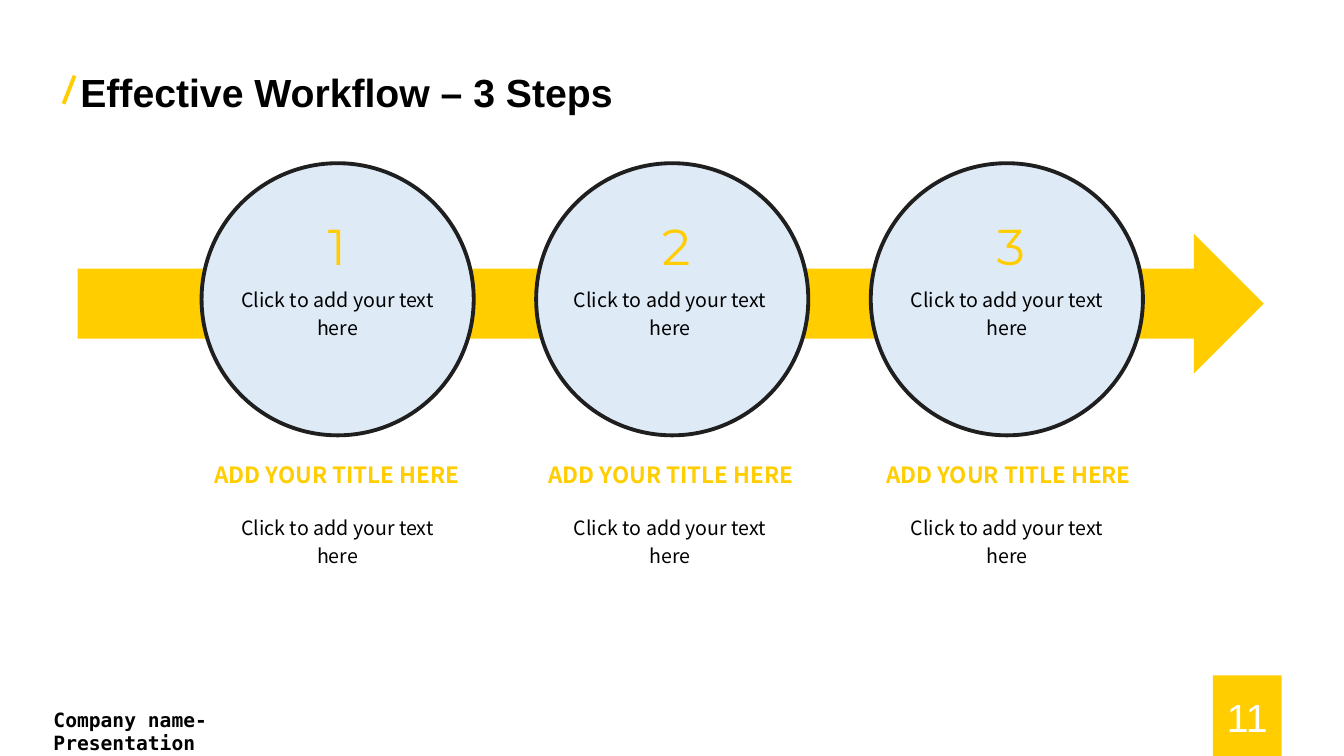
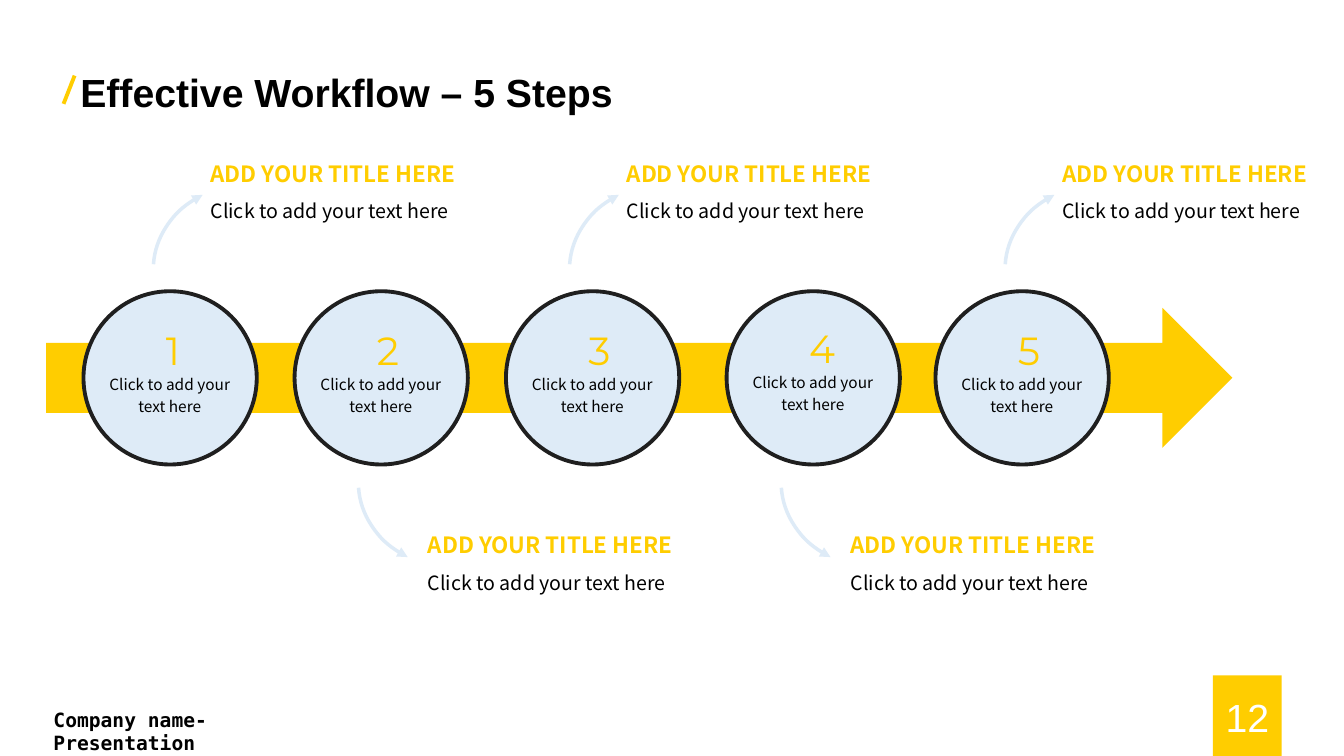
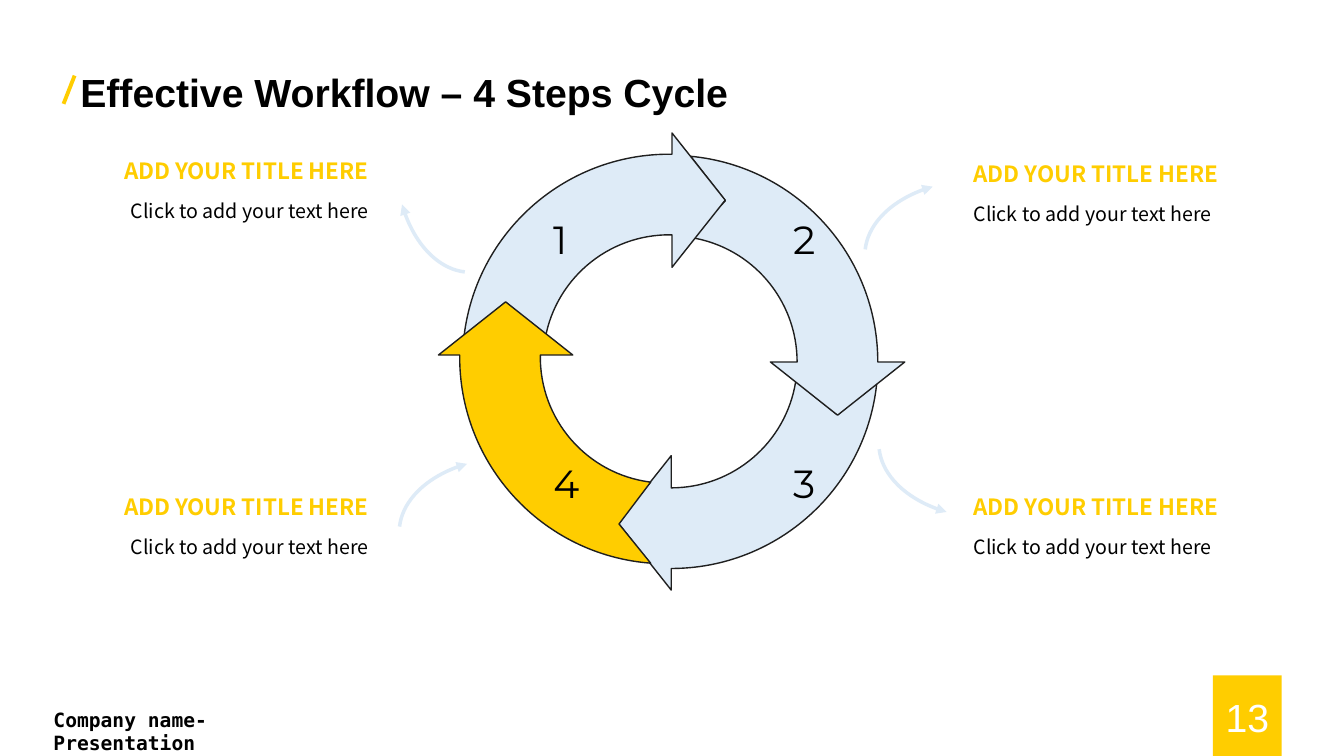
from math import asin, cos, degrees, radians, sin, tan

from lxml import etree
from pptx import Presentation
from pptx.dml.color import RGBColor
from pptx.enum.shapes import MSO_CONNECTOR, MSO_SHAPE
from pptx.enum.text import MSO_ANCHOR, MSO_AUTO_SIZE, PP_ALIGN
from pptx.oxml.ns import qn
from pptx.util import Pt

LEFT, CENTER, RIGHT = PP_ALIGN.LEFT, PP_ALIGN.CENTER, PP_ALIGN.RIGHT
TOP, MIDDLE = MSO_ANCHOR.TOP, MSO_ANCHOR.MIDDLE
NO_AUTOFIT = MSO_AUTO_SIZE.NONE
STRAIGHT = MSO_CONNECTOR.STRAIGHT
RECTANGLE, OVAL = MSO_SHAPE.RECTANGLE, MSO_SHAPE.OVAL
ARC, RIGHT_ARROW = MSO_SHAPE.ARC, MSO_SHAPE.RIGHT_ARROW

YELLOW, PALE_BLUE, INK = "FFCD00", "DEEBF7", "1F1F1F"
BLACK, WHITE = "000000", "FFFFFF"
TITLE_FONT, FOOTER_FONT = "Arial", "DejaVu Sans Mono"
NUMBER_FONT, BODY_FONT = "Montserrat", "Noto Sans CJK SC"

SLIDE_WIDTH, SLIDE_HEIGHT = 960, 540
TITLE_ONLY = 5
HEADING = "ADD YOUR TITLE HERE"
PROMPT = "Click to add your text here"

OUTER_RADIUS, INNER_RADIUS = 147.6, 90
HEAD_HALF, HEAD_LENGTH = 48, 38
OUTER_CURVE, INNER_CURVE = 0, 7


def color(hex_value):
    return RGBColor.from_string(hex_value)


def points(*lengths):
    return [Pt(length) for length in lengths]


def write(holder, text, size=14, font=BODY_FONT, fill=BLACK, bold=False,
          align=LEFT, anchor=TOP, spacing=None):
    frame = holder.text_frame
    frame.word_wrap = True
    frame.auto_size = NO_AUTOFIT
    frame.vertical_anchor = anchor
    frame.text = text
    paragraph = frame.paragraphs[0]
    paragraph.alignment = align
    if spacing:
        paragraph.line_spacing = spacing
    style = paragraph.runs[0].font
    style.name, style.size, style.bold = font, Pt(size), bold
    style.color.rgb = color(fill)


def add_text(slide, box, text, **style):
    write(slide.shapes.add_textbox(*points(*box)), text, **style)


def paint(shape, fill=None, line=None, width=1):
    shape.shadow.inherit = False
    if fill:
        shape.fill.solid()
        shape.fill.fore_color.rgb = color(fill)
    else:
        shape.fill.background()
    if line:
        shape.line.color.rgb = color(line)
        shape.line.width = Pt(width)
    else:
        shape.line.fill.background()


def add_figure(slide, kind, box, **look):
    figure = slide.shapes.add_shape(kind, *points(*box))
    paint(figure, **look)
    return figure


def add_number(slide, left, top, number, size=28, width=20, fill=YELLOW):
    add_text(slide, (left, top, width, size * 1.45), str(number), size=size,
             font=NUMBER_FONT, fill=fill, align=CENTER)


def add_heading(slide, left, top, width, align=LEFT):
    add_text(slide, (left, top, width, 26.6), HEADING, size=16,
             fill=YELLOW, bold=True, align=align)


def add_prompt(slide, box, size=14, align=CENTER):
    add_text(slide, box, PROMPT, size=size, align=align, spacing=1.2)


def add_callout(slide, left, top, width, gap, align=LEFT):
    add_heading(slide, left, top, width, align)
    add_prompt(slide, (left, top + gap, width, 27.4), align=align)


def add_pointer(slide, box, flipped=False, rotation=0):
    pointer = add_figure(slide, ARC, box, line=PALE_BLUE, width=2.5)
    pointer.adjustments[0], pointer.adjustments[1] = 109.73, 141.98
    pointer.rotation = rotation
    properties = pointer._element.spPr
    if flipped:
        properties.find(qn("a:xfrm")).set("flipV", "1")
    outline = properties.find(qn("a:ln"))
    etree.SubElement(outline, qn("a:tailEnd")).set("type", "triangle")


def add_base(deck, title, page, title_width=415.4):
    slide = deck.slides.add_slide(deck.slide_layouts[TITLE_ONLY])
    heading = slide.shapes.title
    heading.left, heading.top, heading.width, heading.height = points(
        50.2, 45.3, title_width, 41)
    write(heading, title, size=28, font=TITLE_FONT, bold=True, anchor=MIDDLE)

    slash = slide.shapes.add_connector(STRAIGHT, *points(53.3, 54, 45.4, 74.2))
    slash.line.color.rgb = color(YELLOW)
    slash.line.width = Pt(2.75)
    etree.SubElement(slash._element.spPr, qn("a:effectLst"))

    page_tab = add_figure(slide, RECTANGLE, (866.4, 482.4, 49, 59), fill=YELLOW)
    write(page_tab, str(page), size=28, font=TITLE_FONT, fill=WHITE,
          align=CENTER, anchor=MIDDLE)
    add_text(slide, (31.1, 501.8, 223.9, 24), "Company name-Presentation",
             font=FOOTER_FONT, bold=True)
    return slide


def add_track(slide, left, top):
    add_figure(slide, RIGHT_ARROW, (left, top, 847.4, 100), fill=YELLOW)


def add_disc(slide, left, top, diameter):
    add_figure(slide, OVAL, (left, top, diameter, diameter),
               fill=PALE_BLUE, line=INK, width=2.75)


def add_large_step(slide, left, top, number, prompt_inset, heading_inset):
    add_disc(slide, left, top, 194.4)
    add_number(slide, left + 82.8, top + 33.4, number, size=36, width=28)
    for drop in (82.1, 244.8):
        add_prompt(slide, (left + prompt_inset, top + drop, 155.5, 47.5))
    add_heading(slide, left + heading_inset, top + 209.5, 202.3, CENTER)


def add_small_step(slide, left, top, number, lift):
    add_disc(slide, left, top, 123.8)
    add_number(slide, left + 51.8, top + 21.7 - lift, number)
    add_prompt(slide, (left + 6.6, top + 53.6 - lift, 110.2, 38.9), size=11)


def add_step_callout(slide, left, above):
    top, gap = (110.9, 24.4) if above else (375.8, 25)
    shift, drop = (-33.8, 20.2) if above else (-42.5, -92.1)
    add_callout(slide, left, top, 202.3, gap)
    add_pointer(slide, (left + shift, top + drop, 140.4, 122.4), flipped=not above)


def arc_curve(radius, start, end):
    first, last = radians(start), radians(end)
    reach = 4 / 3 * tan((last - first) / 4)
    return [
        (radius * (cos(angle) - pull * sin(angle)), radius * (sin(angle) + pull * cos(angle)))
        for angle, pull in [(first, 0), (first, reach), (last, -reach), (last, 0)]
    ]


def bend(shape, starts):
    segments = list(shape._element.spPr.iter(qn("a:lnTo")))
    for start in starts:
        controls = segments[start:start + 3]
        curve = etree.Element(qn("a:cubicBezTo"))
        controls[0].addprevious(curve)
        for control in controls:
            curve.append(control[0])
            control.getparent().remove(control)


def add_cycle_arrow(slide, center, turns, lead, tip_radius, tail, notch, fill):
    outer, inner = [
        arc_curve(radius, 180 + degrees(asin(tail / radius)),
                  270 + degrees(asin(lead / radius)))
        for radius in (OUTER_RADIUS, INNER_RADIUS)
    ]
    head = [
        (lead, -tip_radius - HEAD_HALF),
        (lead + HEAD_LENGTH, -tip_radius),
        (lead, -tip_radius + HEAD_HALF),
    ]
    outline = outer + head + inner[::-1] + [notch]
    for _ in range(turns):
        outline = [(-y, x) for x, y in outline]
    placed = [points(center[0] + x, center[1] + y) for x, y in outline]
    builder = slide.shapes.build_freeform(*placed[0], scale=1.0)
    builder.add_line_segments(placed[1:], close=True)
    arrow = builder.convert_to_shape()
    bend(arrow, (OUTER_CURVE, INNER_CURVE))
    paint(arrow, fill=fill, line=INK)


def build_three_steps(deck):
    slide = add_base(deck, "Effective Workflow – 3 Steps", 11)
    add_track(slide, 55.4, 166.9)
    insets = [(19.4, -4.4), (18, -5), (19.5, -2.8)]
    for i, (prompt_inset, heading_inset) in enumerate(insets):
        add_large_step(slide, 144 + 239 * i, 116.6, i + 1, prompt_inset, heading_inset)


def build_five_steps(deck):
    slide = add_base(deck, "Effective Workflow – 5 Steps", 12)
    add_track(slide, 32.9, 219.9)
    steps = [(59.6, 0), (210.4, 0), (361.4, 0), (519, 1.4), (668.2, 0)]
    for number, (left, lift) in enumerate(steps, 1):
        add_small_step(slide, left, 208, number, lift)
    for i, left in enumerate([143.3, 298.5, 440.6, 600.5, 751.7]):
        add_step_callout(slide, left, above=i % 2 == 0)


def build_cycle(deck):
    slide = add_base(deck, "Effective Workflow – 4 Steps Cycle", 13, 491)
    cycle_arrows = [
        ((479.5, 258.5), 2, 0, 115, 13.9, (-118.2, -37.4), PALE_BLUE),
        ((479.4, 258.6), 1, 0, 118.9, 13.9, (-115.2, -38.8), PALE_BLUE),
        ((478, 257.8), 0, 2, 114.8, 11.2, (-119, -33.8), PALE_BLUE),
        ((476, 255.1), 3, 1.5, 114.8, 11.2, (-119.2, -33.8), YELLOW),
    ]
    for arrow in cycle_arrows:
        add_cycle_arrow(slide, *arrow)

    number_spots = [(388, 150.5), (559.4, 150.5), (559.4, 324.3), (388.2, 324.3)]
    for number, (left, top) in enumerate(number_spots, 1):
        add_number(slide, left, top, number, fill=BLACK)

    for left, top, align in [(45.1, 108.7, RIGHT), (688.3, 110.9, LEFT),
                             (45.1, 348.9, RIGHT), (688.3, 348.9, LEFT)]:
        add_callout(slide, left, top, 225.4, 26.4, align)

    for left, top, flipped, rotation in [(617.8, 128.9, False, 0), (627.8, 263.5, True, 0),
                                         (285.2, 326.9, False, 0), (255.4, 60.5, False, 270)]:
        add_pointer(slide, (left, top, 161.3, 106.6), flipped, rotation)


def main():
    deck = Presentation()
    deck.slide_width, deck.slide_height = points(SLIDE_WIDTH, SLIDE_HEIGHT)
    build_three_steps(deck)
    build_five_steps(deck)
    build_cycle(deck)
    deck.save("out.pptx")


if __name__ == "__main__":
    main()
